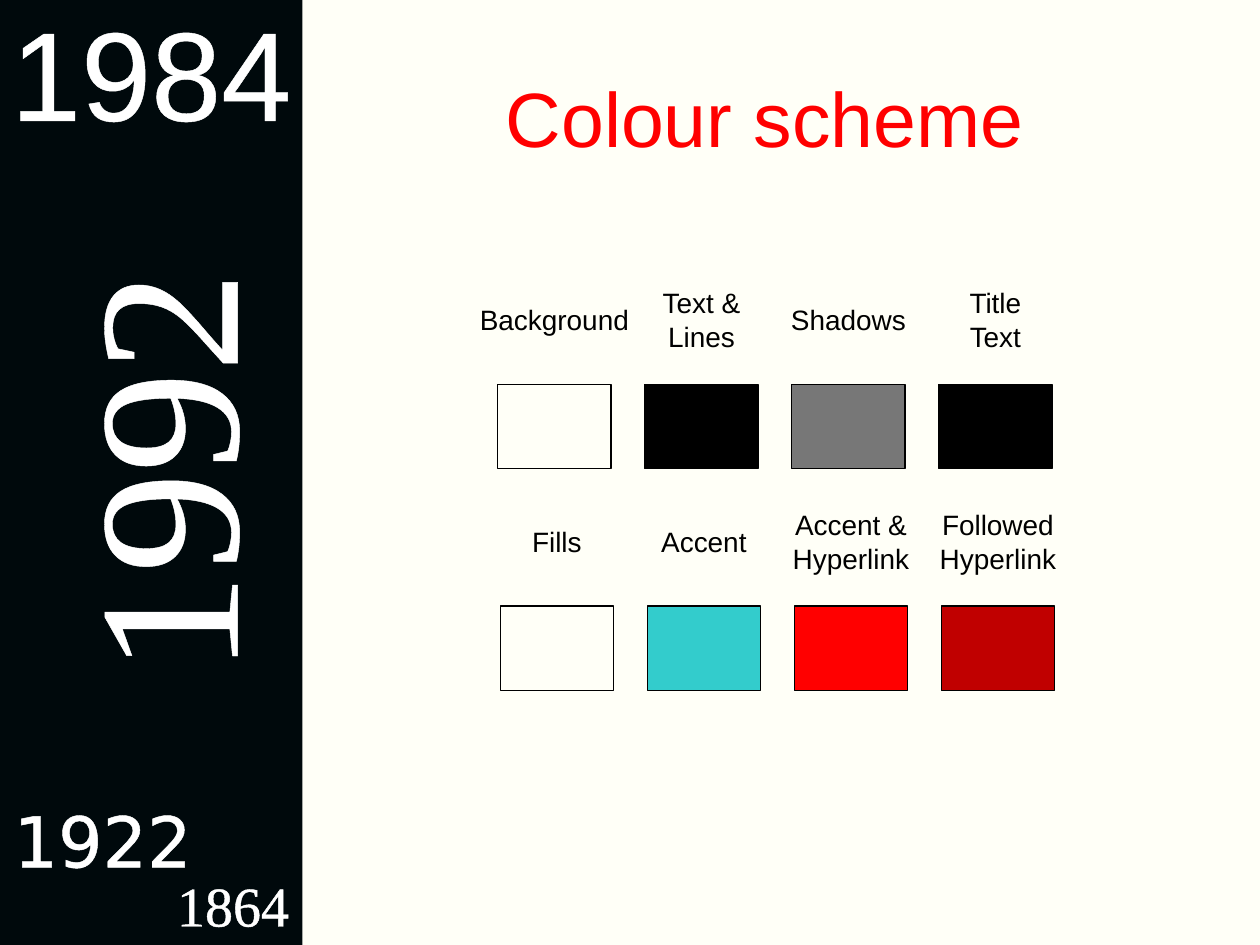
from dataclasses import dataclass

from lxml.etree import SubElement
from pptx import Presentation
from pptx.dml.color import RGBColor
from pptx.enum.shapes import MSO_SHAPE
from pptx.enum.text import MSO_ANCHOR, MSO_AUTO_SIZE, PP_ALIGN
from pptx.oxml.ns import qn
from pptx.slide import Slide
from pptx.text.text import TextFrame
from pptx.util import Inches, Pt


@dataclass(frozen=True)
class Theme:
    background: str = "FFFFF7"
    sidebar: str = "00090C"
    year: str = "FFFFFF"
    title: str = "FF0000"
    text: str = "000000"
    font: str = "Arial"
    title_size: float = 44
    label_size: float = 16
    line_width: float = 0.75
    year_outline: float = 1.45


@dataclass(frozen=True)
class Box:
    left: float
    top: float
    width: float
    height: float

    def lengths(self) -> tuple:
        return tuple(Inches(v) for v in (self.left, self.top, self.width, self.height))


@dataclass(frozen=True)
class Year:
    text: str
    box: Box
    size: float
    font: str
    rotation: float = 0


@dataclass(frozen=True)
class Swatch:
    label: str
    label_width: float
    color: str


@dataclass(frozen=True)
class SwatchRow:
    left: float
    top: float
    swatches: tuple[Swatch, ...]


THEME = Theme()
SWATCH_WIDTH, SWATCH_HEIGHT = 0.9, 0.67
SWATCH_PITCH = 3.5 / 3  # four swatches, first to last 3.5 inches apart
LABEL_RISE = 0.51  # from the middle of a label down to its swatch
LABEL_HEIGHTS = {1: 0.37, 2: 0.64}  # by number of lines

YEARS = (
    Year("1992", Box(-1.5, 2.73, 5.52, 2.04), 115, "Times New Roman", 270),
    Year("1984", Box(-0.06, -0.09, 2.52, 1.31), 72, "Arial"),
    Year("1922", Box(0, 6.28, 1.63, 0.77), 40, "DejaVu Sans"),
    Year("1864", Box(1.3, 6.86, 1.1, 0.64), 32, "Times New Roman"),
)
ROWS = (
    SwatchRow(3.95, 3.05, (
        Swatch("Background", 1.4, "FFFFF7"),
        Swatch("Text &\nLines", 0.85, "000000"),
        Swatch("Shadows", 1.12, "777777"),
        Swatch("Title\vText", 0.64, "000000"),
    )),
    SwatchRow(3.97, 4.81, (
        Swatch("Fills", 0.62, "FFFFF7"),
        Swatch("Accent", 0.9, "33CCCC"),
        Swatch("Accent &\nHyperlink", 1.15, "FF0000"),
        Swatch("Followed\nHyperlink", 1.15, "C00000"),
    )),
)


def rgb(color: str) -> RGBColor:
    return RGBColor.from_string(color)


def add_rectangle(slide: Slide, box: Box, color: str, outlined: bool) -> None:
    rectangle = slide.shapes.add_shape(MSO_SHAPE.RECTANGLE, *box.lengths())
    rectangle.shadow.inherit = False
    rectangle.fill.solid()
    rectangle.fill.fore_color.rgb = rgb(color)
    if outlined:
        rectangle.line.color.rgb = rgb(THEME.text)
        rectangle.line.width = Pt(THEME.line_width)
    else:
        rectangle.line.fill.background()


def add_text(slide: Slide, box: Box, text: str, size: float, color: str,
             font: str = THEME.font, rotation: float = 0, wrap: bool = False) -> TextFrame:
    """Add centred text; unless it wraps, its box grows to fit."""
    text_box = slide.shapes.add_textbox(*box.lengths())
    text_box.rotation = rotation
    frame = text_box.text_frame
    frame.word_wrap = wrap
    frame.auto_size = MSO_AUTO_SIZE.NONE if wrap else MSO_AUTO_SIZE.SHAPE_TO_FIT_TEXT
    frame.text = text
    for paragraph in frame.paragraphs:
        paragraph.alignment = PP_ALIGN.CENTER
        for run in paragraph.runs:
            run.font.name = font
            run.font.size = Pt(size)
            run.font.color.rgb = rgb(color)
    return frame


def add_year(slide: Slide, year: Year) -> None:
    frame = add_text(slide, year.box, year.text, year.size, THEME.year,
                     year.font, year.rotation)
    properties = frame.paragraphs[0].runs[0].font._element
    outline = SubElement(properties, qn("a:ln"), w=str(Pt(THEME.year_outline)))
    fill = SubElement(outline, qn("a:solidFill"))
    SubElement(fill, qn("a:srgbClr"), val=THEME.year)
    properties.insert(0, outline)


def add_swatch_row(slide: Slide, row: SwatchRow) -> None:
    for column, swatch in enumerate(row.swatches):
        left = row.left + column * SWATCH_PITCH
        add_rectangle(slide, Box(left, row.top, SWATCH_WIDTH, SWATCH_HEIGHT),
                      swatch.color, outlined=True)
        height = LABEL_HEIGHTS[len(swatch.label.splitlines())]
        label_box = Box(left + (SWATCH_WIDTH - swatch.label_width) / 2,
                        row.top - LABEL_RISE - height / 2,
                        swatch.label_width, height)
        add_text(slide, label_box, swatch.label, THEME.label_size, THEME.text)


def main() -> None:
    presentation = Presentation()
    presentation.slide_width, presentation.slide_height = Inches(10), Inches(7.5)
    slide = presentation.slides.add_slide(presentation.slide_layouts[6])
    slide.background.fill.solid()
    slide.background.fill.fore_color.rgb = rgb(THEME.background)

    add_rectangle(slide, Box(0, 0, 2.4, 7.5), THEME.sidebar, outlined=False)
    for year in YEARS:
        add_year(slide, year)

    title = add_text(slide, Box(2.64, 0.3, 6.86, 1.25), "Colour scheme",
                     THEME.title_size, THEME.title, wrap=True)
    title.vertical_anchor = MSO_ANCHOR.MIDDLE
    for row in ROWS:
        add_swatch_row(slide, row)

    presentation.save("out.pptx")


if __name__ == "__main__":
    main()
